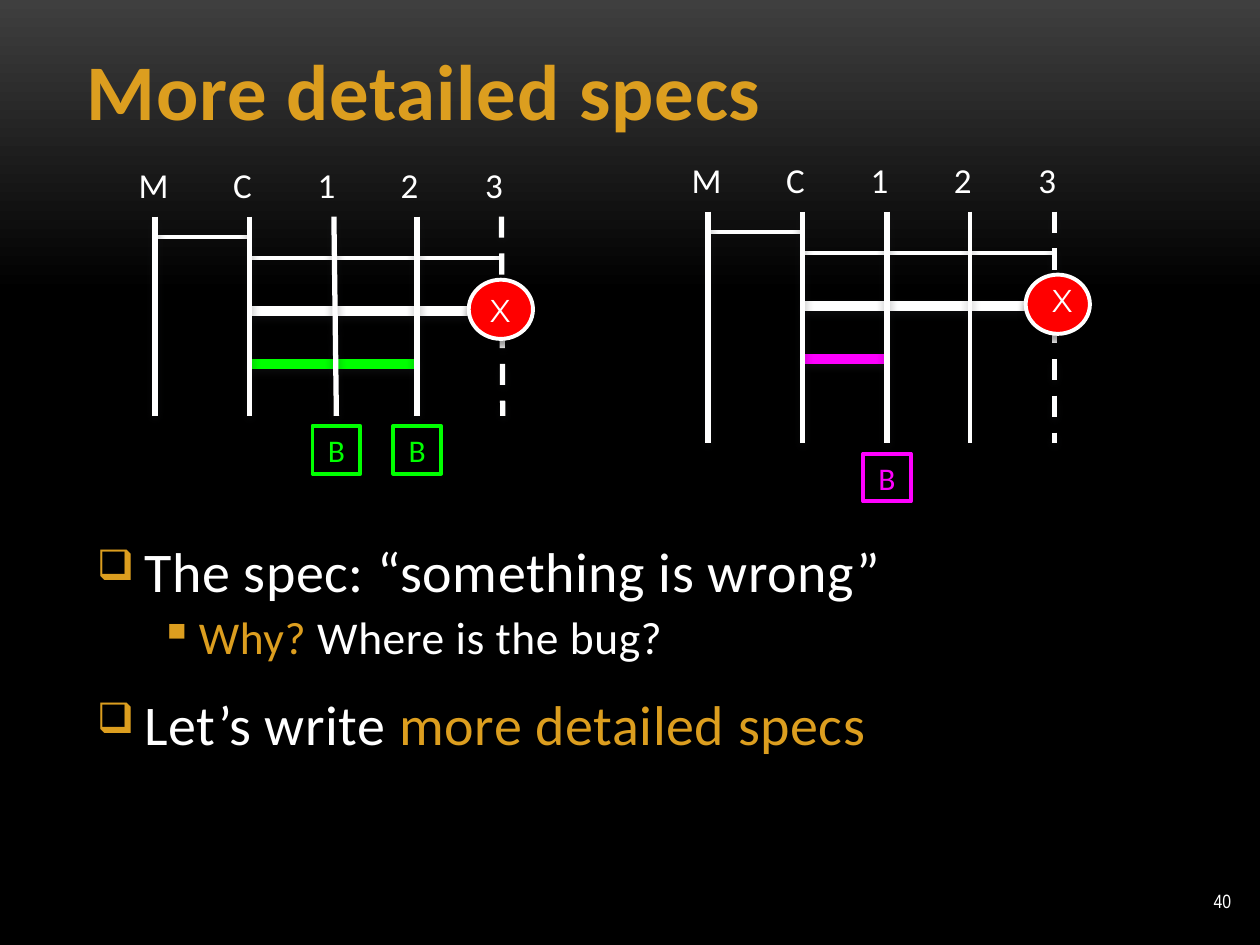
from dataclasses import dataclass

from lxml import etree
from pptx import Presentation
from pptx.dml.color import RGBColor
from pptx.enum.dml import MSO_LINE
from pptx.enum.shapes import MSO_CONNECTOR, MSO_SHAPE
from pptx.enum.text import MSO_ANCHOR, MSO_AUTO_SIZE, PP_ALIGN
from pptx.oxml.ns import qn
from pptx.util import Inches, Pt

STRAIGHT = MSO_CONNECTOR.STRAIGHT
OVAL, RECT = MSO_SHAPE.OVAL, MSO_SHAPE.RECTANGLE
TOP, MIDDLE, BOTTOM = MSO_ANCHOR.TOP, MSO_ANCHOR.MIDDLE, MSO_ANCHOR.BOTTOM
LEFT, CENTER, RIGHT = PP_ALIGN.LEFT, PP_ALIGN.CENTER, PP_ALIGN.RIGHT
DASH = MSO_LINE.DASH
FIT = MSO_AUTO_SIZE.SHAPE_TO_FIT_TEXT


@dataclass(frozen=True)
class Theme:
    white: str = "FFFFFF"
    black: str = "000000"
    grey: str = "3F3F3F"
    gold: str = "DC9E1F"
    red: str = "FF0000"
    green: str = "00FF00"
    magenta: str = "FF00FF"
    shade: str = "1F2123"
    font: str = "Calibri"
    mark_font: str = "Montserrat"
    number_font: str = "Arial Narrow"
    title: float = 45
    body: float = 32
    sub: float = 26
    label: float = 20
    mark: float = 18
    number: float = 11


T = Theme()


@dataclass(frozen=True)
class Shadow:
    color: str
    alpha: int
    blur: float
    dist: float


THICK_SHADOW = Shadow(T.shade, 38, 5, 2)
COLUMN_SHADOW = Shadow(T.shade, 35, 5, 2)
FAULT_SHADOW = Shadow(T.black, 40, 4, 3.4)


@dataclass(frozen=True)
class Column:
    label: str
    dx: float
    label_width: float
    dash: bool = False


COLUMNS = [Column("M", 0, 0.26), Column("C", 0.75, 0.24), Column("1", 1.42, 0.19),
           Column("2", 2.08, 0.19), Column("3", 2.75, 0.19, True)]


@dataclass(frozen=True)
class Diagram:
    left: float
    top: float
    height: float
    color: str
    blocked: tuple[int, ...]
    widths: tuple[float, ...]
    drifts: tuple[float, ...]
    fault_dx: float
    mark_at: tuple[float, float]


DIAGRAMS = [
    Diagram(1.23, 1.72, 1.58, T.green, (2, 3), (3, 3, 3, 3, 3),
            (0, 0, 0.02, 0, 0.01), 0, (3.72, 2.31)),
    Diagram(5.62, 1.68, 1.84, T.magenta, (2,), (3, 3, 3, 2, 3),
            (0, 0, 0, 0, 0), 0.03, (8.18, 2.23)),
]


@dataclass(frozen=True)
class Bullet:
    char: str
    size: float
    margin: float
    hang: float
    before: float
    scale: int
    runs: tuple[tuple[str, str], ...]


BULLETS = [
    Bullet("❑", T.body, 0.38, 0.38, 15, 75, (("The spec: “something is wrong”", T.white),)),
    Bullet("▪", T.sub, 0.81, 0.31, 3, 100,
           (("Why? ", T.gold), ("Where is the bug?", T.white))),
    Bullet("❑", T.body, 0.38, 0.38, 15, 75,
           (("Let’s write ", T.white), ("more detailed specs", T.gold))),
]


def rgb(color: str) -> RGBColor:
    return RGBColor.from_string(color)


def set_shadow(sp, shadow: Shadow | None) -> None:
    pr = sp._element.spPr
    for old in pr.findall(qn("a:effectLst")):
        pr.remove(old)
    effects = etree.SubElement(pr, qn("a:effectLst"))
    if shadow:
        outer = etree.SubElement(effects, qn("a:outerShdw"), blurRad=str(Pt(shadow.blur)),
                                 dist=str(Pt(shadow.dist)), dir="5400000", rotWithShape="0")
        clr = etree.SubElement(outer, qn("a:srgbClr"), val=shadow.color)
        etree.SubElement(clr, qn("a:alpha"), val=str(shadow.alpha * 1000))


def add_line(s, x1: float, y1: float, x2: float, y2: float, color: str, width: float,
             shadow: Shadow | None = None, dash: bool = False) -> None:
    sp = s.shapes.add_connector(STRAIGHT, Inches(x1), Inches(y1), Inches(x2), Inches(y2))
    sp.line.color.rgb = rgb(color)
    sp.line.width = Pt(width)
    if dash:
        sp.line.dash_style = DASH
    set_shadow(sp, shadow)


def set_frame(tf, insets: tuple[float, ...], anchor, wrap: bool = True) -> None:
    tf.margin_left, tf.margin_top, tf.margin_right, tf.margin_bottom = map(Inches, insets)
    tf.vertical_anchor = anchor
    tf.word_wrap = wrap


def set_text(p, text: str, size: float, color: str, font: str = T.font, align=LEFT) -> None:
    p.alignment = align
    p.font.name, p.font.size = font, Pt(size)
    p.font.color.rgb = rgb(color)
    p.add_run().text = text


def add_box(s, x: float, y: float, w: float, h: float, insets: tuple[float, ...],
            anchor=TOP, wrap: bool = True):
    tf = s.shapes.add_textbox(Inches(x), Inches(y), Inches(w), Inches(h)).text_frame
    set_frame(tf, insets, anchor, wrap)
    return tf


def add_figure(s, kind, x: float, y: float, w: float, h: float, fill: str, line: str):
    sp = s.shapes.add_shape(kind, Inches(x), Inches(y), Inches(w), Inches(h))
    sp.fill.solid()
    sp.fill.fore_color.rgb = rgb(fill)
    sp.line.color.rgb = rgb(line)
    sp.line.width = Pt(2.25)
    sp.shadow.inherit = False
    return sp


def add_diagram(s, d: Diagram) -> None:
    xs = [d.left + c.dx for c in COLUMNS]
    bottom = d.top + d.height
    rows = [(0, 1, 0.16, T.white, 2, None), (1, 4, 0.33, T.white, 2, None),
            (1, 4, 0.75, T.white, 6, THICK_SHADOW),
            (1, d.blocked[-1], 1.17, d.color, 6, THICK_SHADOW)]
    for start, end, dy, color, width, shadow in rows:
        add_line(s, xs[start], d.top + dy, xs[end], d.top + dy, color, width, shadow)
    for c, x, width, drift in zip(COLUMNS, xs, d.widths, d.drifts):
        tf = add_box(s, x - 0.17, d.top - 0.42, c.label_width, 0.34, (0, 0, 0.04, 0), wrap=False)
        tf.auto_size = FIT
        p = tf.paragraphs[0]
        set_text(p, c.label, T.label, T.white)
        p._p.get_or_add_pPr().set("marL", str(Inches(0.04)))
        add_line(s, x, d.top, x + drift, bottom, T.white, width, COLUMN_SHADOW, c.dash)
    fault = add_figure(s, OVAL, xs[-1] - 0.26 + d.fault_dx, d.top + 0.5, 0.51, 0.47,
                       T.red, T.white)
    set_shadow(fault, FAULT_SHADOW)
    tf = add_box(s, *d.mark_at, 0.5, 0.3, (0.1, 0, 0.1, 0), MIDDLE)
    set_text(tf.paragraphs[0], "X", T.mark, T.white, T.mark_font, CENTER)
    for i in d.blocked:
        sp = add_figure(s, RECT, xs[i] + d.drifts[i] - 0.19, bottom + 0.08, 0.38, 0.38,
                        T.black, d.color)
        set_frame(sp.text_frame, (0.1, 0, 0.1, 0), MIDDLE)
        set_text(sp.text_frame.paragraphs[0], "B", T.mark, d.color, align=CENTER)


def add_bullet(p, b: Bullet) -> None:
    p.space_before = Pt(b.before)
    pr = p._p.get_or_add_pPr()
    pr.set("marL", str(Inches(b.margin)))
    pr.set("indent", str(-Inches(b.hang)))
    clr = etree.SubElement(pr, qn("a:buClr"))
    etree.SubElement(clr, qn("a:srgbClr"), val=T.gold)
    etree.SubElement(pr, qn("a:buSzPct"), val=str(b.scale * 1000))
    etree.SubElement(pr, qn("a:buChar"), char=b.char)
    p.font.name, p.font.size = T.font, Pt(b.size)
    for text, color in b.runs:
        r = p.add_run()
        r.text = text
        r.font.color.rgb = rgb(color)
        r._r.get_or_add_rPr().set("spc", "30")


def main() -> None:
    prs = Presentation()
    prs.slide_width, prs.slide_height = Inches(10), Inches(7.5)
    s = prs.slides.add_slide(prs.slide_layouts[6])
    fill = s.background.fill
    fill.gradient()
    fill.gradient_angle = 270
    for stop, position, color in zip(fill.gradient_stops, (0, 0.31), (T.grey, T.black)):
        stop.position = position
        stop.color.rgb = rgb(color)

    p = add_box(s, 0.59, 0.42, 8.67, 0.66, (0.1, 0, 0.1, 0), BOTTOM).paragraphs[0]
    set_text(p, "More detailed specs", T.title, T.gold)
    p.font.bold = True
    p.runs[0]._r.get_or_add_rPr().set("spc", "50")
    p = add_box(s, 8.79, 6.95, 1.08, 0.4, (0.1, 0.05, 0.1, 0.05), MIDDLE).paragraphs[0]
    set_text(p, "40", T.number, T.white, T.number_font, RIGHT)
    tf = add_box(s, 0.67, 4.21, 8.67, 2.75, (0.1, 0.05, 0.1, 0.05))
    for i, b in enumerate(BULLETS):
        add_bullet(tf.add_paragraph() if i else tf.paragraphs[0], b)
    for d in DIAGRAMS:
        add_diagram(s, d)
    prs.save("out.pptx")


if __name__ == "__main__":
    main()
